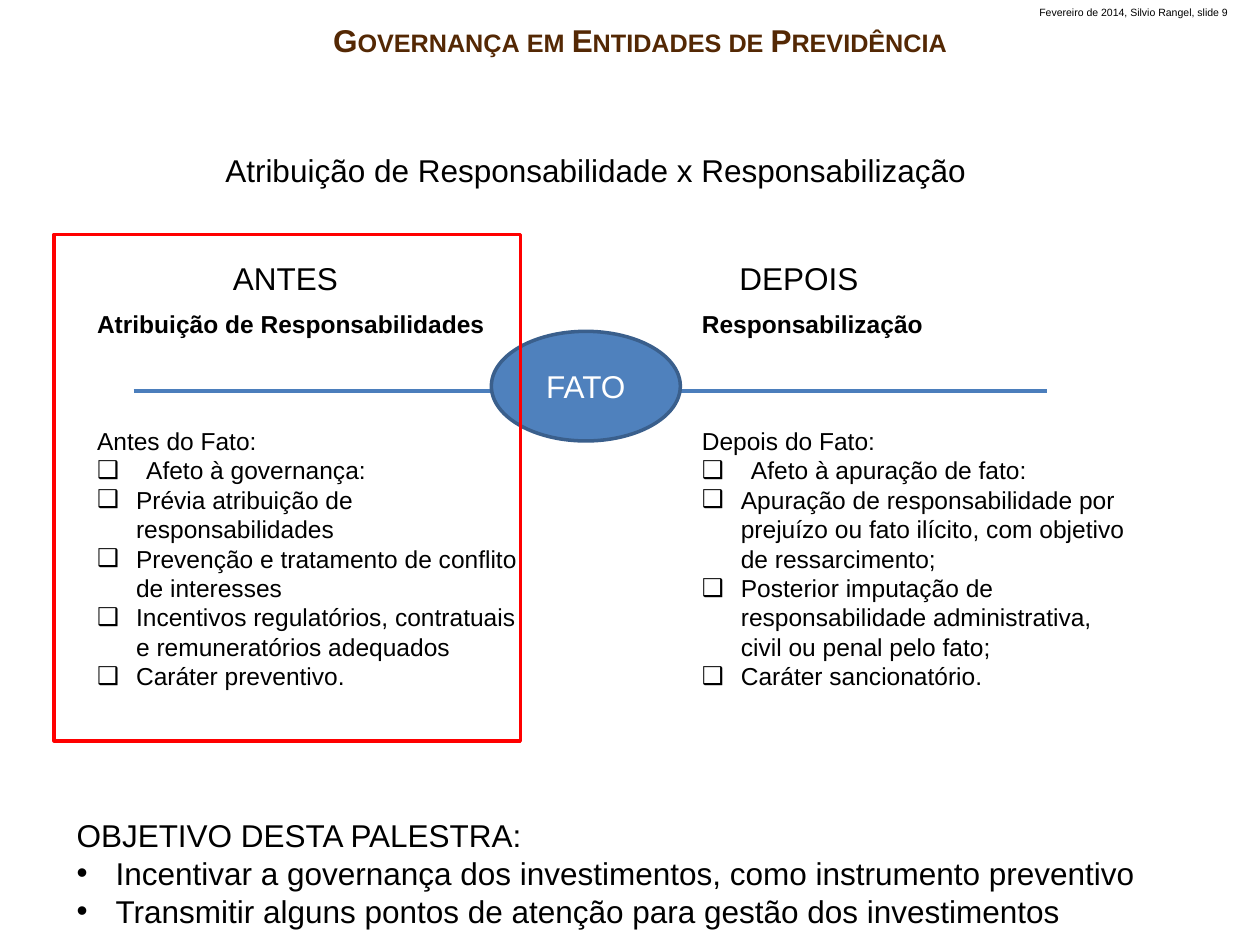
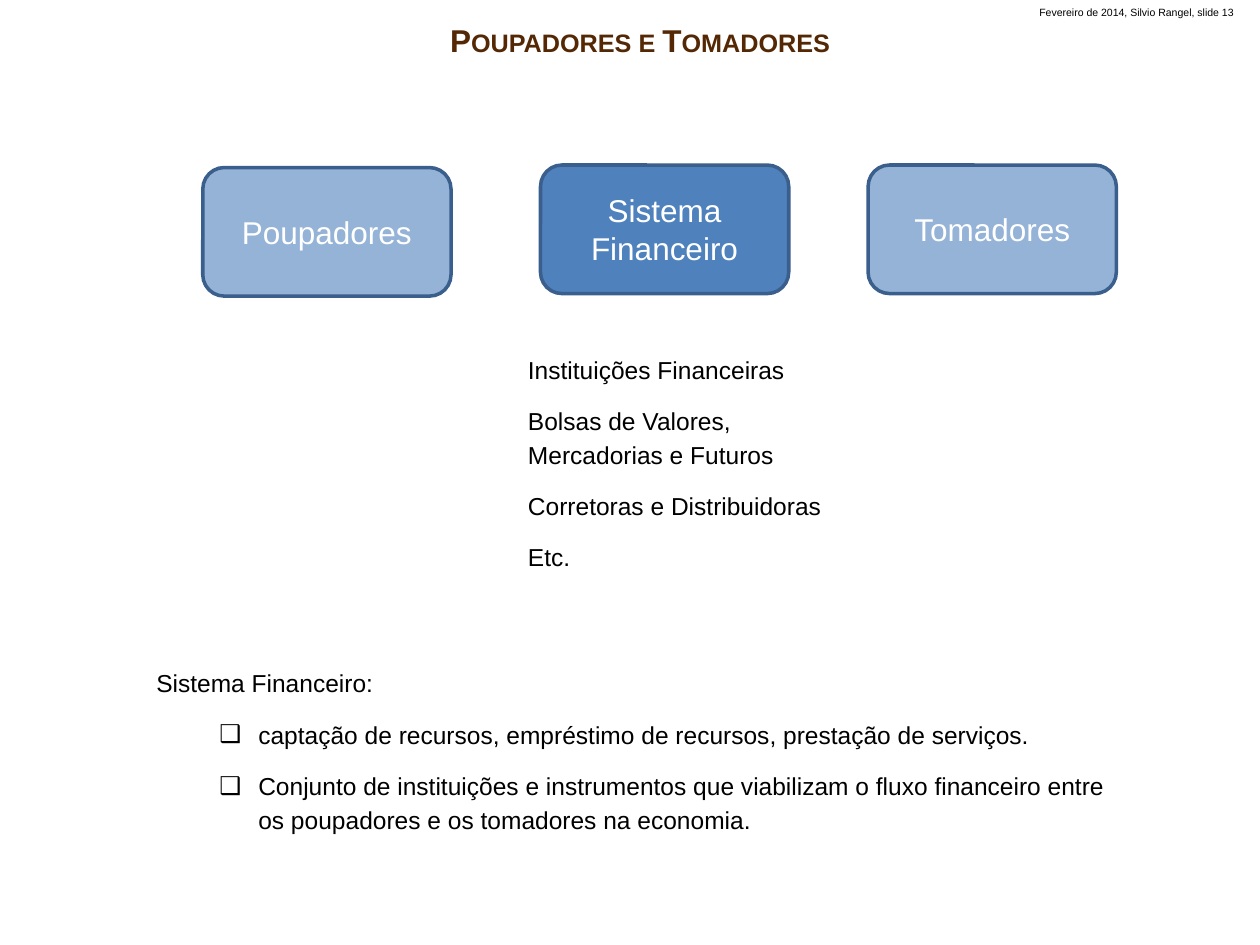
from lxml import etree
from pptx import Presentation
from pptx.dml.color import RGBColor
from pptx.enum import shapes, text
from pptx.oxml import ns
from pptx.util import Pt

PX = 9144  # 100 px to the inch
FONT = "Arial"
INK = {"black": "000000", "brown": "542804", "white": "FFFFFF", "blue": "4F81BD",
       "pale": "95B3D7", "edge": "3A5F8C", "axis": "4B7EBC", "red": "FF0000"}
INK = {name: RGBColor.from_string(code) for name, code in INK.items()}
LEFT, MID = text.PP_ALIGN.LEFT, text.PP_ALIGN.CENTER
TOP, CORE = text.MSO_ANCHOR.TOP, text.MSO_ANCHOR.MIDDLE
KIND = shapes.MSO_SHAPE


def write(shape, spot, lines, size=14, ink="black", bold=False, align=LEFT,
          anchor=TOP, lead=1, after=0):
    """Place a shape and fill it; a line is text or (text, mark, margin, hang)."""
    shape.left, shape.top, shape.width, shape.height = [n * PX for n in spot]
    frame = shape.text_frame
    frame.word_wrap = True
    frame.auto_size = text.MSO_AUTO_SIZE.NONE
    frame.vertical_anchor = anchor
    for i, line in enumerate(lines):
        words, mark, margin, hang = (line, None, 0, 0) if isinstance(line, str) else line
        para = frame.paragraphs[0] if i == 0 else frame.add_paragraph()
        props = para._p.get_or_add_pPr()
        props.set("marL", str(margin * PX))
        props.set("indent", str(-hang * PX))
        if mark:
            etree.SubElement(props, ns.qn("a:buFont")).set("typeface", FONT)
            etree.SubElement(props, ns.qn("a:buChar")).set("char", mark)
        else:
            etree.SubElement(props, ns.qn("a:buNone"))
        para.alignment = align
        para.line_spacing = lead
        para.space_before, para.space_after = Pt(0), Pt(after)
        run = para.add_run()
        run.text = words
        run.font.name, run.font.size, run.font.bold = FONT, Pt(size), bold
        run.font.color.rgb = INK[ink]
    return frame


def draw(slide, kind, spot, fill=None, edge="edge", words=()):
    shape = slide.shapes.add_shape(kind, *[n * PX for n in spot])
    shape.shadow.inherit = False
    if fill:
        shape.fill.solid()
        shape.fill.fore_color.rgb = INK[fill]
    else:
        shape.fill.background()
    shape.line.color.rgb = INK[edge]
    shape.line.width = Pt(2)
    write(shape, spot, words, 18, "white", align=MID, anchor=CORE)


deck = Presentation()
deck.slide_width, deck.slide_height = 1000 * PX, 750 * PX

# Shared title and page mark
pages = []
for layout, title, number in [(4, "Governança em Entidades de Previdência", 9),
                              (3, "Poupadores e Tomadores", 13)]:
    slide = deck.slides.add_slide(deck.slide_layouts[layout])
    frame = write(slide.shapes.title, (67, 12, 882, 40), [title], 18, "brown", True, MID)
    frame.paragraphs[0].runs[0].font._element.set("cap", "small")
    write(slide.shapes.add_textbox(0, 0, 0, 0), (815, 0, 185, 20),
          [f"Fevereiro de 2014, Silvio Rangel, slide {number}"], 6)
    pages.append(slide)
duty, market = pages

# Before and after the fact
axis = duty.shapes.add_connector(shapes.MSO_CONNECTOR.STRAIGHT,
                                 106 * PX, 310 * PX, 831 * PX, 310 * PX)
axis.line.color.rgb = INK["axis"]
axis.line.width = Pt(2.25)
etree.SubElement(axis._element.spPr, ns.qn("a:effectLst"))

sides = [
    (67, 175, "ANTES", "Atribuição de Responsabilidades", "Antes do Fato:",
     "Afeto à governança:",
     ["Prévia atribuição de responsabilidades",
      "Prevenção e tratamento de conflito de interesses",
      "Incentivos regulatórios, contratuais e remuneratórios adequados",
      "Caráter preventivo."]),
    (547, 577, "DEPOIS", "Responsabilização", "Depois do Fato:",
     "Afeto à apuração de fato:",
     ["Apuração de responsabilidade por prejuízo ou fato ilícito, com objetivo de ressarcimento;",
      "Posterior imputação de responsabilidade administrativa, civil ou penal pelo fato;",
      "Caráter sancionatório."]),
]
for i, (left, mid, when, head, lead, scope, points) in enumerate(sides):
    write(duty.shapes.add_textbox(0, 0, 0, 0), (mid, 201, 130, 40), [when], 18)
    write(duty.placeholders[2 * i + 1], (left, 240, 362, 34), [head], bold=True)
    write(duty.placeholders[2 * i + 2], (left, 333, 362, 223),
          [lead, (scope, "❑", 39, 39)] + [(point, "❑", 31, 31) for point in points])

draw(duty, KIND.FLOWCHART_CONNECTOR, (390, 263, 150, 87), "blue", words=["FATO"])
draw(duty, KIND.RECTANGLE, (43, 186, 370, 402), edge="red")
write(duty.shapes.add_textbox(0, 0, 0, 0), (169, 115, 630, 40),
      ["Atribuição de Responsabilidade x Responsabilização"], 18)
goals = ["Incentivar a governança dos investimentos, como instrumento preventivo",
         "Transmitir alguns pontos de atenção para gestão dos investimentos"]
write(duty.shapes.add_textbox(0, 0, 0, 0), (51, 643, 890, 101),
      ["OBJETIVO DESTA PALESTRA:"] + [(goal, "•", 31, 31) for goal in goals], 18)

# Savers, financial system, borrowers
for left, top, fill, name in [(161, 133, "pale", "Poupadores"),
                              (429, 131, "blue", "Sistema Financeiro"),
                              (689, 131, "pale", "Tomadores")]:
    draw(market, KIND.ROUNDED_RECTANGLE, (left, top, 197, 102), fill, words=[name])

write(market.placeholders[1], (409, 273, 272, 188),
      ["Instituições Financeiras", "Bolsas de Valores, Mercadorias e Futuros",
       "Corretoras e Distribuidoras", "Etc."], lead=1.15, after=10)
roles = ["captação de recursos, empréstimo de recursos, prestação de serviços.",
         "Conjunto de instituições e instrumentos que viabilizam o fluxo financeiro "
         "entre os poupadores e os tomadores na economia."]
write(market.placeholders[2], (114, 522, 788, 144),
      ["Sistema Financeiro:"] + [(role, "❑", 81, 31) for role in roles],
      lead=1.15, after=10)

deck.save("out.pptx")
